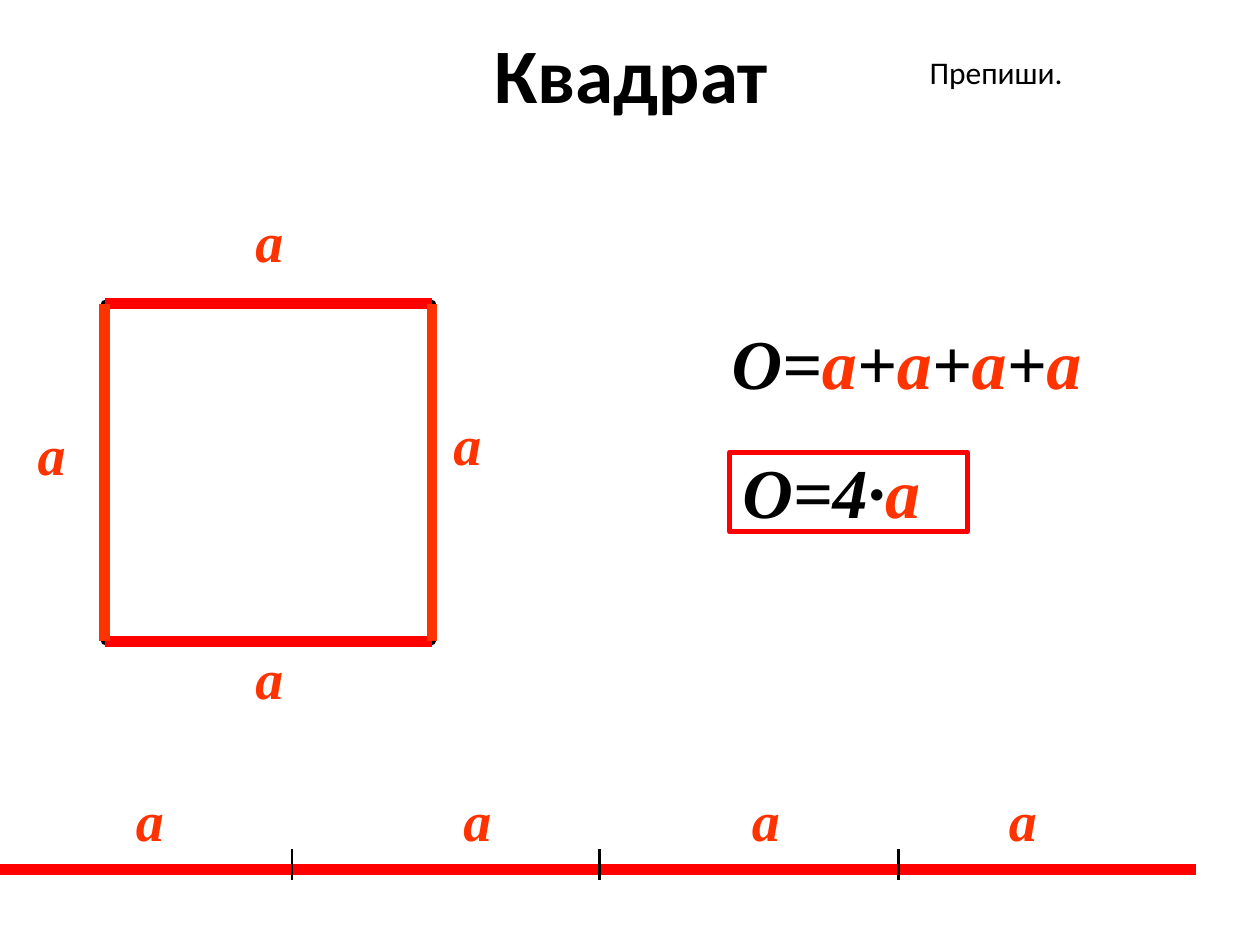
"""Builds a slide on the perimeter of a square."""
from itertools import pairwise

from lxml import etree
from pptx import Presentation
from pptx.dml.color import RGBColor
from pptx.enum.shapes import MSO_CONNECTOR, MSO_SHAPE
from pptx.enum.text import MSO_ANCHOR, MSO_AUTO_SIZE, PP_ALIGN
from pptx.oxml.ns import qn
from pptx.util import Cm, Pt

STRAIGHT = MSO_CONNECTOR.STRAIGHT
RECTANGLE = MSO_SHAPE.RECTANGLE
MIDDLE = MSO_ANCHOR.MIDDLE
CENTER = PP_ALIGN.CENTER
NO_AUTOFIT = MSO_AUTO_SIZE.NONE
FIT_SHAPE = MSO_AUTO_SIZE.SHAPE_TO_FIT_TEXT

THEME = {
    "black": RGBColor(0, 0, 0),
    "red": RGBColor(0xFF, 0, 0),
    "orange": RGBColor(0xFF, 0x33, 0),
    "text_font": "Calibri",
    "math_font": "Times New Roman",
    "title": 44,
    "formula": 40,
    "label": 32,
    "note": 18,
    "side": 6,
    "outline": 4.5,
    "frame": 3,
    "tick": 1.5,
}

TITLE = ("Квадрат", (1.3, 0, 22.86, 2.92))
NOTE = ("Препиши.", (18.49, 0.94, 5.41, 1.02))
SUM_FORMULA = (["О=", "а", "+", "a", "+", "a", "+", "a"], (14.5, 6.32, 10.24, 2.21))
SHORT_FORMULA = (["О=4∙", "а"], (14.71, 8.92, 10.24, 2.21))
FORMULA_FRAME = (14.71, 9.12, 4.8, 1.6)
SQUARE = (2.11, 6.12, 6.6, 6.81)
SIDE_LABELS = [(4.9, 12.85), (8.89, 8.13), (4.9, 4.04), (0.51, 8.33)]
UNROLLED_Y = 17.53
UNROLLED_MARKS = [0, 5.89, 12.09, 18.11, 24.1]
UNROLLED_LABEL_Y = 15.72
UNROLLED_LABELS = [2.49, 9.09, 14.91, 20.09]
TICK_TOP, TICK_BOTTOM = 17.12, 17.73
LABEL = "а"
LABEL_SIZE = (1.09, 1.63)


def place(shape, box):
    shape.left, shape.top, shape.width, shape.height = map(Cm, box)


def style(font, name, size, color, bold=False, italic=False):
    font.name, font.size = THEME[name], Pt(THEME[size])
    font.color.rgb = THEME[color]
    font.bold, font.italic = bold, italic


def add_line(slide, start, end, color, weight):
    line = slide.shapes.add_connector(STRAIGHT, *map(Cm, (*start, *end)))
    line.line.color.rgb = THEME[color]
    line.line.width = Pt(THEME[weight])
    etree.SubElement(line._element.spPr, qn("a:effectLst"))


def add_outline(slide, box, color, weight):
    shape = slide.shapes.add_shape(RECTANGLE, *map(Cm, box))
    shape.shadow.inherit = False
    shape.fill.background()
    shape.line.color.rgb = THEME[color]
    shape.line.width = Pt(THEME[weight])


def add_label(slide, position):
    box = slide.shapes.add_textbox(*map(Cm, (*position, *LABEL_SIZE)))
    text_frame = box.text_frame
    text_frame.text = LABEL
    text_frame.word_wrap = False
    text_frame.auto_size = FIT_SHAPE
    style(text_frame.paragraphs[0].runs[0].font, "math_font", "label", "orange", True, True)


def write_formula(shape, parts):
    text_frame = shape.text_frame
    text_frame.word_wrap = True
    text_frame.auto_size = NO_AUTOFIT
    paragraph = text_frame.paragraphs[0]
    properties = paragraph._p.get_or_add_pPr()
    properties.set("marL", "0")
    properties.set("indent", "0")
    etree.SubElement(properties, qn("a:buNone"))
    paragraph.space_before = Pt(0)
    for part in parts:
        run = paragraph.add_run()
        run.text = part
        color = "orange" if part in ("а", "a") else "black"
        style(run.font, "math_font", "formula", color, True, True)


def add_square(slide):
    left, top, width, height = SQUARE
    right, bottom = left + width, top + height
    add_outline(slide, SQUARE, "black", "outline")
    for position in SIDE_LABELS:
        add_label(slide, position)
    for y in (top, bottom):
        add_line(slide, (left, y), (right, y), "red", "side")
    for x in (left, right):
        add_line(slide, (x, top), (x, bottom), "orange", "side")


def add_unrolled_perimeter(slide):
    for start, end in pairwise(UNROLLED_MARKS):
        add_line(slide, (start, UNROLLED_Y), (end, UNROLLED_Y), "red", "side")
    for x in UNROLLED_MARKS[1:-1]:
        add_line(slide, (x, TICK_TOP), (x, TICK_BOTTOM), "black", "tick")
    for x in UNROLLED_LABELS:
        add_label(slide, (x, UNROLLED_LABEL_Y))


def main():
    presentation = Presentation()
    presentation.slide_width, presentation.slide_height = Cm(25.4), Cm(19.05)
    slide = presentation.slides.add_slide(presentation.slide_layouts[1])

    text, box = TITLE
    title = slide.shapes.title
    place(title, box)
    title.text_frame.text = text
    title.text_frame.vertical_anchor = MIDDLE
    title.text_frame.paragraphs[0].alignment = CENTER
    style(title.text_frame.paragraphs[0].runs[0].font, "text_font", "title", "black", True)

    parts, box = SHORT_FORMULA
    body = slide.placeholders[1]
    place(body, box)
    write_formula(body, parts)

    add_square(slide)
    add_unrolled_perimeter(slide)

    parts, box = SUM_FORMULA
    write_formula(slide.shapes.add_textbox(*map(Cm, box)), parts)
    add_outline(slide, FORMULA_FRAME, "red", "frame")

    text, box = NOTE
    note = slide.shapes.add_textbox(*map(Cm, box)).text_frame
    note.text = text
    note.word_wrap = True
    note.auto_size = FIT_SHAPE
    style(note.paragraphs[0].runs[0].font, "text_font", "note", "black")

    presentation.save("out.pptx")


if __name__ == "__main__":
    main()
